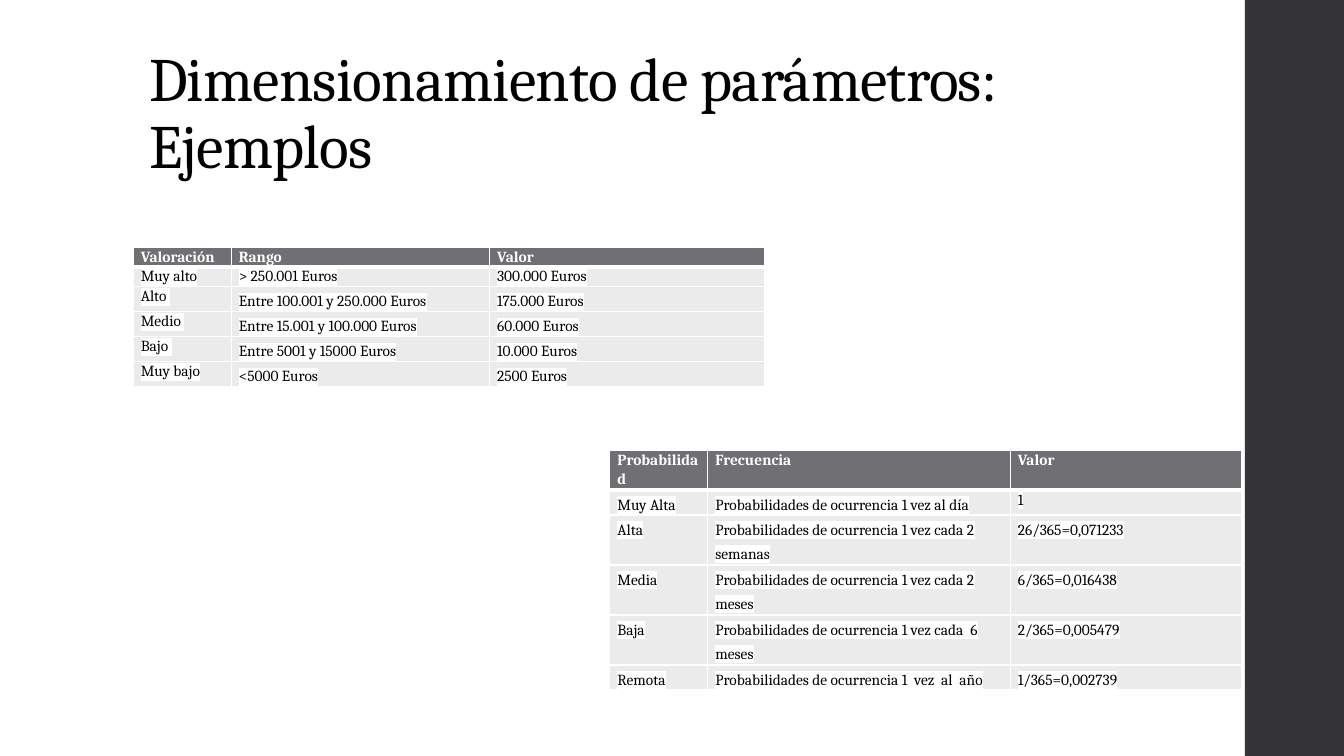
"""Builds the slide on parameter sizing with its two example tables."""
from lxml import etree
from pptx import Presentation
from pptx.dml.color import RGBColor
from pptx.enum.shapes import MSO_SHAPE
from pptx.enum.text import MSO_ANCHOR, PP_ALIGN
from pptx.oxml.ns import qn
from pptx.util import Pt

RECTANGLE = MSO_SHAPE.RECTANGLE
BOTTOM = MSO_ANCHOR.BOTTOM
LEFT, JUSTIFY = PP_ALIGN.LEFT, PP_ALIGN.JUSTIFY

WHITE = RGBColor(0xFF, 0xFF, 0xFF)
BLACK = RGBColor(0x00, 0x00, 0x00)
CHARCOAL = RGBColor(0x35, 0x35, 0x37)
HEADER_GRAY = RGBColor(0x6F, 0x6F, 0x74)
ROW_GRAY = RGBColor(0xEB, 0xEB, 0xEB)

TIGHT, LOOSE = 1.07, 1.35

VALUATION = [
    ("Valoración", "Rango", "Valor"),
    ("Muy alto", "> 250.001 Euros", "300.000 Euros"),
    ("Alto ", "Entre 100.001 y 250.000 Euros", "175.000 Euros"),
    ("Medio ", "Entre 15.001 y 100.000 Euros", "60.000 Euros"),
    ("Bajo ", "Entre 5001 y 15000 Euros", "10.000 Euros"),
    ("Muy bajo", "<5000 Euros", "2500 Euros"),
]
PROBABILITY = [
    ("Probabilidad", "Frecuencia", "Valor"),
    ("Muy Alta", "Probabilidades de ocurrencia 1 vez al día", "1"),
    ("Alta", "Probabilidades de ocurrencia 1 vez cada 2 semanas", "26/365=0,071233"),
    ("Media", "Probabilidades de ocurrencia 1 vez cada 2 meses", "6/365=0,016438"),
    ("Baja", "Probabilidades de ocurrencia 1 vez cada  6 meses", "2/365=0,005479"),
    ("Remota", "Probabilidades de ocurrencia 1  vez  al  año", "1/365=0,002739"),
]


def apply(target, values):
    """Set each named attribute of the target."""
    for name, value in values.items():
        setattr(target, name, value)


def add_color(parent, color):
    """Append an RGB colour element."""
    etree.SubElement(parent, qn("a:srgbClr"), val=str(color))


class SlideBuilder:
    """Holds the text style and the current slide."""

    font = "Cambria"
    cell_size = 11
    cell_format = {"margin_left": Pt(5.4), "margin_right": Pt(5.4),
                   "margin_top": 0, "margin_bottom": 0}

    def __init__(self, page):
        """Keep the slide to draw on."""
        self.page = page

    def add_text(self, frame, text, size, color, bold=False, **paragraph_format):
        """Add one styled paragraph and return its run."""
        para = frame.paragraphs[0]
        apply(para, paragraph_format)
        span = para.add_run()
        span.text = text
        apply(span.font, {"name": self.font, "size": Pt(size), "bold": bold})
        span.font.color.rgb = color
        return span

    def bar(self, left, top, width, height, color):
        """Draw a plain filled rectangle."""
        box = self.page.shapes.add_shape(
            RECTANGLE, Pt(left), Pt(top), Pt(width), Pt(height))
        box.shadow.inherit = False
        box.fill.solid()
        box.fill.fore_color.rgb = color
        box.line.fill.background()

    def title(self, left, top, width, height, text):
        """Draw the bottom-anchored title."""
        box = self.page.shapes.add_textbox(
            Pt(left), Pt(top), Pt(width), Pt(height))
        apply(box.text_frame, {"word_wrap": True, "vertical_anchor": BOTTOM})
        span = self.add_text(box.text_frame, text, 44, BLACK, line_spacing=0.9)
        span.font._element.set("spc", "-50")

    def highlight(self, span):
        """Put a white highlight behind a run."""
        mark = etree.Element(qn("a:highlight"))
        add_color(mark, WHITE)
        span.font._element.find(qn("a:solidFill")).addnext(mark)

    def borders(self, cell, top, bottom):
        """Give a cell white borders, with its top and bottom widths."""
        properties = cell._tc.get_or_add_tcPr()
        sides = {"a:lnL": 1, "a:lnR": 1, "a:lnT": top, "a:lnB": bottom}
        for position, (side, width) in enumerate(sides.items()):
            line = etree.Element(qn(side), w=str(Pt(width)))
            add_color(etree.SubElement(line, qn("a:solidFill")), WHITE)
            properties.insert(position, line)

    def table(self, left, top, widths, heights, rows, align, tight):
        """Draw a table; tight(row, column) tells which cells are set closer."""
        table = self.page.shapes.add_table(
            len(rows), len(widths), Pt(left), Pt(top),
            Pt(sum(widths)), Pt(sum(heights))).table
        table.horz_banding = False
        for column, width in zip(table.columns, widths):
            column.width = Pt(width)
        for row, height in zip(table.rows, heights):
            row.height = Pt(height)
        for r, texts in enumerate(rows):
            header = r == 0
            for c, text in enumerate(texts):
                cell = table.cell(r, c)
                apply(cell, self.cell_format)
                cell.fill.solid()
                cell.fill.fore_color.rgb = HEADER_GRAY if header else ROW_GRAY
                self.borders(cell, 3 if r == 1 else 1, 3 if header else 1)
                span = self.add_text(
                    cell.text_frame, text, self.cell_size,
                    WHITE if header else BLACK, header, alignment=align,
                    line_spacing=TIGHT if header or tight(r, c) else LOOSE)
                if not header:
                    self.highlight(span)


def main():
    """Build and save the deck."""
    deck = Presentation()
    apply(deck, {"slide_width": Pt(960), "slide_height": Pt(540)})
    builder = SlideBuilder(deck.slides.add_slide(deck.slide_layouts[6]))
    builder.bar(889.2, 0, 70.8, 540, CHARCOAL)
    builder.title(99.4, 28.8, 763.2, 104.4,
                  "Dimensionamiento de parámetros: Ejemplos")
    builder.table(95.2, 176.4, [70, 184.5, 196.5], [13.5] * 2 + [17.3] * 4,
                  VALUATION, JUSTIFY, lambda r, c: r == 1 or c == 0)
    builder.table(435.6, 321.8, [70, 216, 165],
                  [27, 17.3] + [34.3] * 3 + [17.3],
                  PROBABILITY, LEFT, lambda r, c: (r, c) == (1, 2))
    deck.save("out.pptx")


if __name__ == "__main__":
    main()
